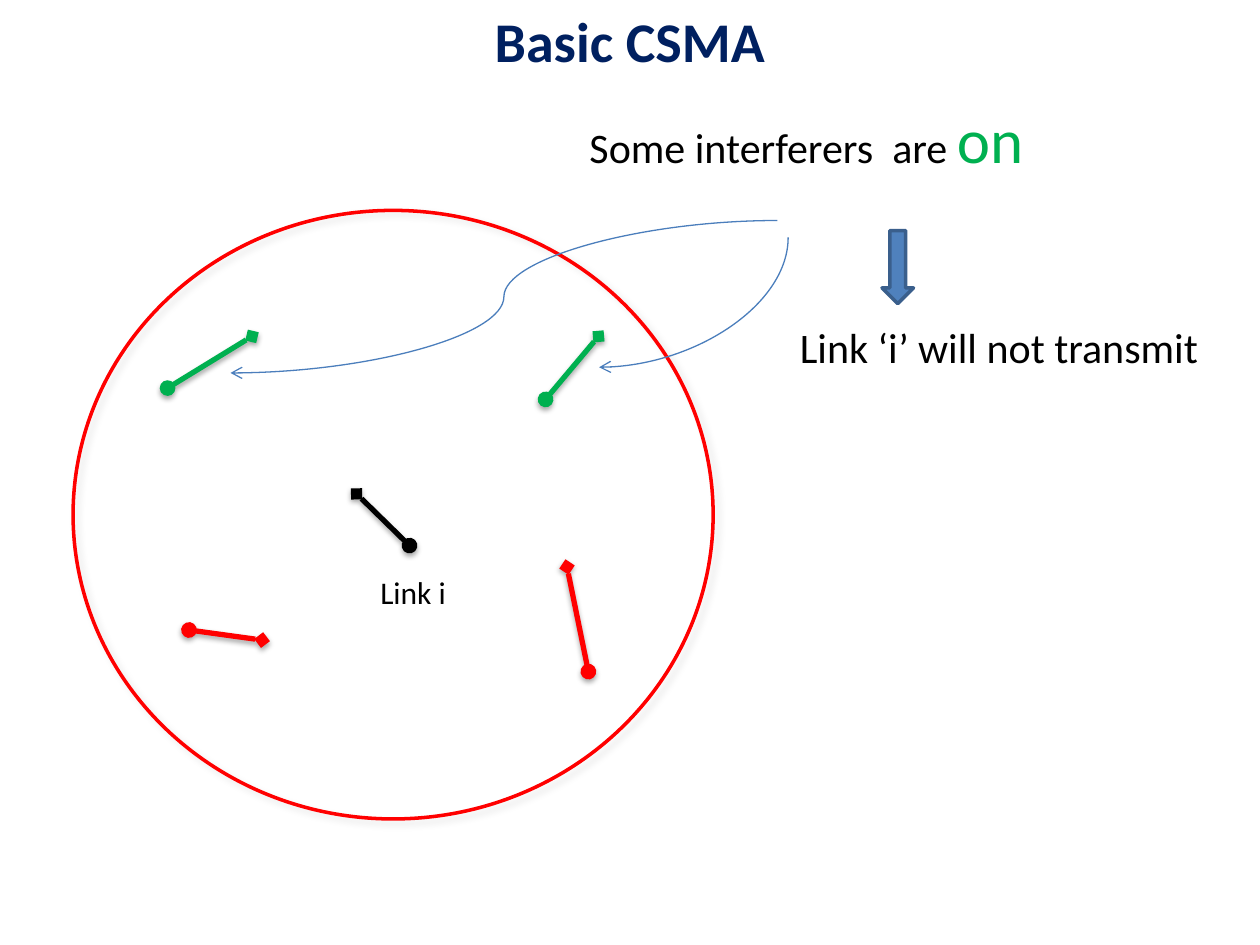
from lxml import etree
from pptx import Presentation
from pptx.dml.color import RGBColor
from pptx.enum.shapes import MSO_CONNECTOR as Conn, MSO_SHAPE as Shape
from pptx.enum.text import MSO_ANCHOR as Anchor, MSO_AUTO_SIZE as Fit, PP_ALIGN as Align
from pptx.oxml.ns import qn
from pptx.util import Inches, Pt

NAVY = RGBColor(0x00, 0x20, 0x60)
BLACK = RGBColor(0x00, 0x00, 0x00)
WHITE = RGBColor(0xFF, 0xFF, 0xFF)
GREEN = RGBColor(0x00, 0xB0, 0x50)
RED = RGBColor(0xFF, 0x00, 0x00)
BLUE = RGBColor(0x4F, 0x81, 0xBD)
EDGE = RGBColor(0x3A, 0x5F, 0x8C)
CURVE = RGBColor(0x4B, 0x7E, 0xBC)
FONT = "Calibri"

# Wireless links: square end, round end, colour
LINKS = [
    ((2.83, 3.92), (3.25, 4.33), BLACK),
    ((4.75, 2.67), (4.33, 3.17), GREEN),
    ((4.5, 4.5), (4.67, 5.33), RED),
    ((2.08, 5.08), (1.5, 5), RED),
    ((2, 2.67), (1.33, 3.08), GREEN),
]


def inches(box):
    return [Inches(v) for v in box]


def add_shade(part, alpha=None, blur=0, dist=0, angle=0):
    """Give the part an outer shadow, or none when alpha is left out."""
    effects = etree.SubElement(part._element.spPr, qn("a:effectLst"))
    if alpha is None:
        return
    shade = etree.SubElement(
        effects, qn("a:outerShdw"), blurRad=str(Pt(blur)), dist=str(Pt(dist)),
        dir=str(angle * 60000), algn="tl", rotWithShape="0")
    color = etree.SubElement(shade, qn("a:srgbClr"), val=str(BLACK))
    etree.SubElement(color, qn("a:alpha"), val=str(alpha * 1000))


def add_line(slide, kind, start, end, color, width, **ends):
    line = slide.shapes.add_connector(kind, *inches(start + end))
    line.line.color.rgb = color
    line.line.width = Pt(width)
    for name, style in ends.items():
        etree.SubElement(line.line._ln, qn(f"a:{name}"), type=style)
    return line


def set_text(part, runs, wrap=True, align=Align.LEFT, anchor=Anchor.TOP):
    """Write (text, size, colour) runs into one paragraph."""
    frame = part.text_frame
    frame.word_wrap = wrap
    frame.auto_size = Fit.SHAPE_TO_FIT_TEXT
    frame.vertical_anchor = anchor
    para = frame.paragraphs[0]
    para.alignment = align
    for text, size, color in runs:
        run = para.add_run()
        run.text = text
        run.font.name = FONT
        run.font.size = Pt(size)
        run.font.color.rgb = color
    return para


def add_title(slide, box):
    title = slide.shapes.title
    title.left, title.top, title.width, title.height = inches(box)
    para = set_text(title, [("Basic CSMA", 32, NAVY)], align=Align.CENTER)
    para.runs[0].font.bold = True


def add_label(slide, box, text, size, wrap=True):
    label = slide.shapes.add_textbox(*inches(box))
    set_text(label, [(text, size, BLACK)], wrap)


def add_network(slide, box):
    # Links inside the interference range
    for start, end, color in LINKS:
        link = add_line(slide, Conn.STRAIGHT, start, end, color, 3,
                        headEnd="diamond", tailEnd="oval")
        add_shade(link, 35, 3.1, 1.8, 90)

    # Range circle
    ring = slide.shapes.add_shape(Shape.OVAL, *inches(box))
    ring.fill.background()
    ring.line.color.rgb = RED
    ring.line.width = Pt(2)
    add_shade(ring, 10, 4, 3, 45)

    add_label(slide, (2.92, 4.5, 0.73, 0.4), "Link i", 18, wrap=False)


def add_notes(slide, box):
    # State of the interferers
    state = slide.shapes.add_shape(Shape.RECTANGLE, *inches(box))
    state.shadow.inherit = False
    state.fill.background()
    state.line.color.rgb = WHITE
    state.line.width = Pt(0.75)
    set_text(state, [("Some interferers  are ", 24, BLACK), ("on", 36, GREEN)])

    # Consequence for link i
    arrow = slide.shapes.add_shape(Shape.DOWN_ARROW, *inches((7, 1.83, 0.25, 0.58)))
    arrow.shadow.inherit = False
    arrow.fill.solid()
    arrow.fill.fore_color.rgb = BLUE
    arrow.line.color.rgb = EDGE
    arrow.line.width = Pt(2)
    add_label(slide, (6.25, 2.5, 3.5, 0.5), "Link ‘i’ will not transmit", 24)


def add_curves(slide):
    # S-curve to the left green link
    wave = add_line(slide, Conn.CURVE, (6.17, 1.75), (1.83, 2.96), CURVE, 0.75,
                    tailEnd="arrow")
    add_shade(wave)

    # Quarter curve to the right green link, turned by 90 degrees
    bend = add_line(slide, Conn.CURVE, (4.99, 1.65), (6.02, 3.15), CURVE, 0.75,
                    tailEnd="arrow")
    add_shade(bend)
    props = bend._element.spPr
    props.find(qn("a:prstGeom")).set("prst", "curvedConnector2")
    props.find(qn("a:xfrm")).set("rot", str(90 * 60000))


def main():
    deck = Presentation()
    deck.slide_width, deck.slide_height = Inches(10), Inches(7.5)
    slide = deck.slides.add_slide(deck.slide_layouts[5])
    add_network(slide, (0.58, 1.67, 5.08, 4.83))
    add_title(slide, (2.5, 0, 5, 0.64))
    add_notes(slide, (4.58, 0.75, 5.08, 0.71))
    add_curves(slide)
    deck.save("out.pptx")


if __name__ == "__main__":
    main()
